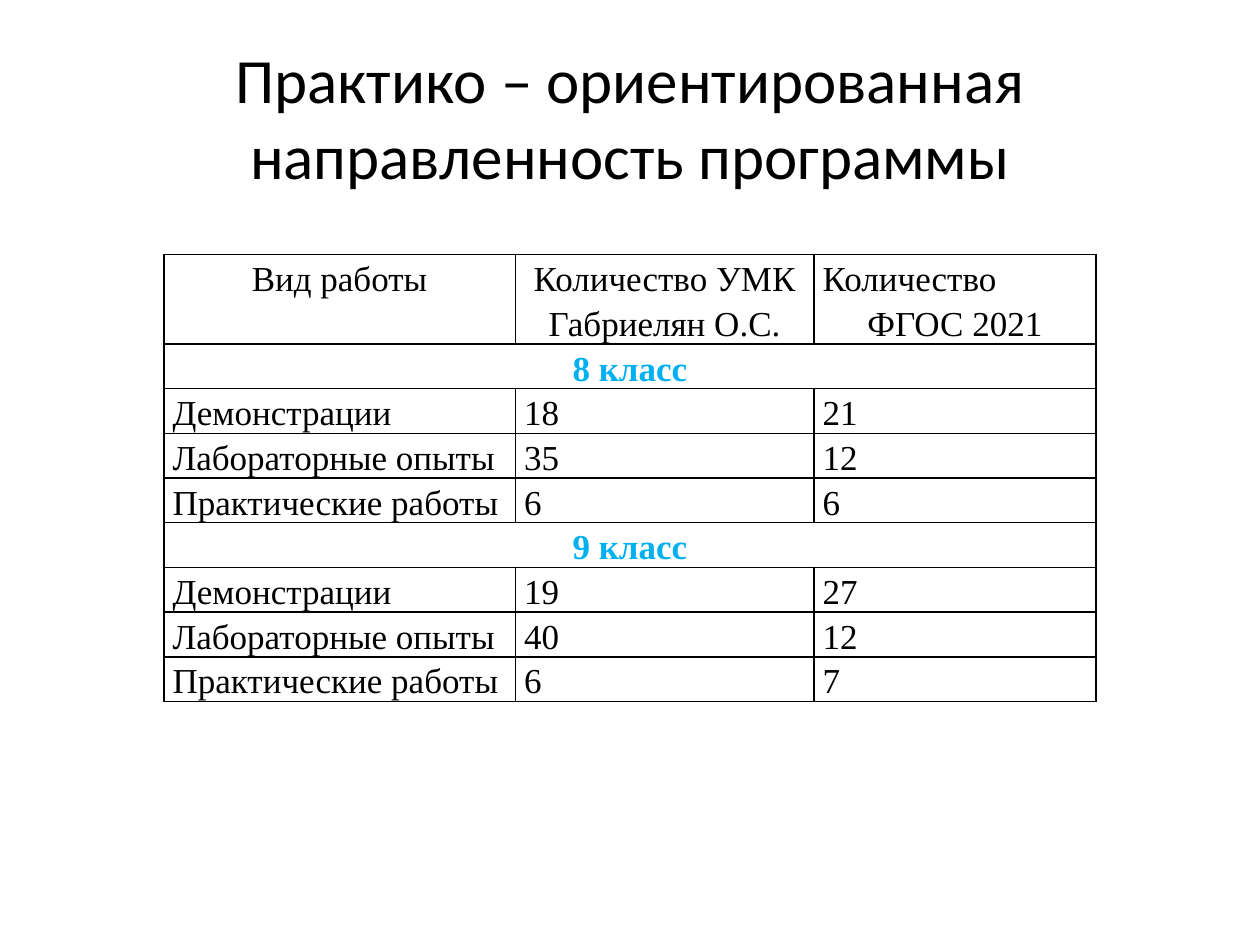
import pptx
import pptx.dml.color
import pptx.enum.text
import pptx.oxml
import pptx.oxml.ns
import pptx.util

Inches = pptx.util.Inches
Pt = pptx.util.Pt
ALIGN = pptx.enum.text.PP_ALIGN

BLACK = "000000"
GRADE_BLUE = "00B0F0"
COLUMN_WIDTHS = (2.79, 2.37, 2.24)
LINE_HEIGHT = 0.355
HEADER = ("Вид работы", "Количество УМК Габриелян О.С.", "Количество\nФГОС 2021")
WORK_KINDS = ("Демонстрации", "Лабораторные опыты", "Практические работы")
GRADES = {
    "8 класс": ((18, 21), (35, 12), (6, 6)),
    "9 класс": ((19, 27), (40, 12), (6, 7)),
}


def color(hex_value):
    return pptx.dml.color.RGBColor.from_string(hex_value)


def format_text(frame, font_name, size, hex_value, align, bold=False):
    for paragraph in frame.paragraphs:
        paragraph.alignment = align
        for run in paragraph.runs:
            run.font.name = font_name
            run.font.size = Pt(size)
            run.font.bold = bold
            run.font.color.rgb = color(hex_value)


def add_borders(cell, hex_value, width):
    properties = cell._tc.get_or_add_tcPr()
    for position, side in enumerate(("lnL", "lnR", "lnT", "lnB")):
        border = pptx.oxml.parse_xml(
            f'<a:{side} {pptx.oxml.ns.nsdecls("a")} w="{Pt(width)}">'
            f'<a:solidFill><a:srgbClr val="{hex_value}"/></a:solidFill></a:{side}>'
        )
        properties.insert(position, border)


def fill_cell(cell, text, align=ALIGN.LEFT, hex_value=BLACK, bold=False):
    cell.margin_left = cell.margin_right = Inches(0.07)
    cell.margin_top = cell.margin_bottom = 0
    cell.text_frame.text = text
    format_text(cell.text_frame, "Times New Roman", 20, hex_value, align, bold)
    for paragraph in cell.text_frame.paragraphs:
        paragraph.line_spacing = 1.15


def place_title(slide, left, top, width, height):
    title = slide.shapes.title
    title.left, title.top, title.width, title.height = left, top, width, height
    title.text_frame.text = "Практико – ориентированная направленность программы"
    title.text_frame.vertical_anchor = pptx.enum.text.MSO_ANCHOR.MIDDLE
    format_text(title.text_frame, "Calibri", 36, BLACK, ALIGN.CENTER)


def place_work_table(slide, left, top, width, height):
    row_count = 1 + len(GRADES) * (1 + len(WORK_KINDS))
    table = slide.shapes.add_table(
        row_count, len(COLUMN_WIDTHS), left, top, width, height
    ).table
    table.first_row = table.horz_banding = False
    for column, share in zip(table.columns, COLUMN_WIDTHS):
        column.width = int(width * share / sum(COLUMN_WIDTHS))
    line_height = height // (row_count + 1)
    for row in table.rows:
        row.height = line_height
    table.rows[0].height = 2 * line_height
    for cell in table.iter_cells():
        cell.fill.background()
        add_borders(cell, BLACK, 1)

    for column, heading in enumerate(HEADER):
        fill_cell(table.cell(0, column), heading, ALIGN.CENTER)
    table.cell(0, 2).text_frame.paragraphs[0].alignment = ALIGN.LEFT

    row_index = 1
    for grade, counts in GRADES.items():
        grade_cell = table.cell(row_index, 0)
        grade_cell.merge(table.cell(row_index, len(COLUMN_WIDTHS) - 1))
        fill_cell(grade_cell, grade, ALIGN.CENTER, GRADE_BLUE, True)
        for offset, (kind, values) in enumerate(zip(WORK_KINDS, counts), 1):
            for column, entry in enumerate((kind, *values)):
                fill_cell(table.cell(row_index + offset, column), str(entry))
        row_index += 1 + len(WORK_KINDS)


def main():
    presentation = pptx.Presentation()
    presentation.slide_width = Inches(10)
    presentation.slide_height = Inches(7.5)
    slide = presentation.slides.add_slide(presentation.slide_layouts[5])
    place_title(slide, Inches(0.5), Inches(0.3), Inches(9), Inches(1.25))
    place_work_table(
        slide, Inches(1.3), Inches(2.02), Inches(7.4), Inches(10 * LINE_HEIGHT)
    )
    presentation.save("out.pptx")


if __name__ == "__main__":
    main()
